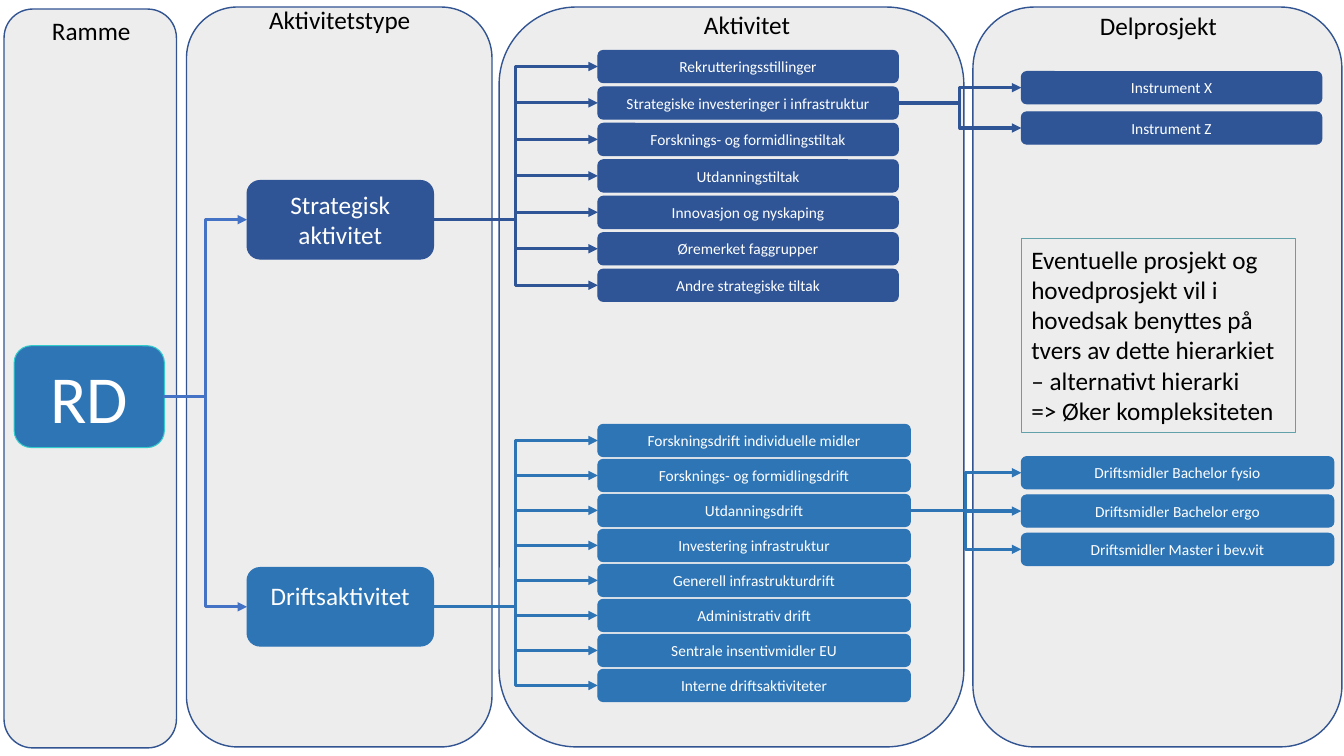
from lxml.etree import SubElement
from pptx import Presentation
from pptx.dml.color import RGBColor
from pptx.enum.shapes import MSO_CONNECTOR, MSO_SHAPE
from pptx.enum.text import MSO_ANCHOR, PP_ALIGN
from pptx.oxml.ns import qn
from pptx.util import Inches, Pt

WHITE = RGBColor(0xFF, 0xFF, 0xFF)
BLACK = RGBColor(0, 0, 0)
PANEL_GREY = RGBColor(0xED, 0xED, 0xED)
PANEL_LINE = RGBColor(0x32, 0x54, 0x91)
NAVY = RGBColor(0x2F, 0x55, 0x97)
BLUE = RGBColor(0x2E, 0x75, 0xB6)
LINK_BLUE = RGBColor(0x44, 0x72, 0xC4)
TURQUOISE = RGBColor(0x33, 0xCC, 0xCC)
NOTE_LINE = RGBColor(0x62, 0xA0, 0xAA)

# Content: panel heading, panel box, heading box (left, top, width, height)
PANELS = [
    ("Delprosjekt", (9.65, 0.07, 3.66, 7.34), (10.51, 0.05, 1.96, 0.4)),
    ("Aktivitet", (4.95, 0.07, 4.61, 7.34), (6.43, 0.04, 1.96, 0.4)),
    ("Aktivitetstype", (1.85, 0.07, 3.03, 7.34), (2.39, -0.01, 1.96, 0.4)),
    ("Ramme", (0.04, 0.09, 1.71, 7.33), (0.29, 0.1, 1.23, 0.4)),
]
ROOT = ("RD", (0.14, 3.43, 1.49, 1.01))

# Each list runs at an equal pitch from its first to its last top edge
BRANCHES = [
    {
        "name": "Strategisk aktivitet", "top": 1.79, "color": NAVY,
        "anchor": MSO_ANCHOR.MIDDLE, "width": 2.98,
        "activities": ["Rekrutteringsstillinger",
                       "Strategiske investeringer i infrastruktur",
                       "Forsknings- og formidlingstiltak",
                       "Utdanningstiltak",
                       "Innovasjon og nyskaping",
                       "Øremerket faggrupper",
                       "Andre strategiske tiltak"],
        "activity_tops": (0.5, 2.67),
        "parent": "Strategiske investeringer i infrastruktur",
        "subprojects": ["Instrument X", "Instrument Z"],
        "subproject_tops": (0.71, 1.11),
    },
    {
        "name": "Driftsaktivitet", "top": 5.63, "color": BLUE,
        "anchor": MSO_ANCHOR.TOP, "width": 3.1,
        "activities": ["Forskningsdrift individuelle midler",
                       "Forsknings- og formidlingsdrift",
                       "Utdanningsdrift",
                       "Investering infrastruktur",
                       "Generell infrastrukturdrift",
                       "Administrativ drift",
                       "Sentrale insentivmidler EU",
                       "Interne driftsaktiviteter"],
        "activity_tops": (4.21, 6.64),
        "parent": "Utdanningsdrift",
        "subprojects": ["Driftsmidler Bachelor fysio",
                        "Driftsmidler Bachelor ergo",
                        "Driftsmidler Master i bev.vit"],
        "subproject_tops": (4.53, 5.29),
    },
]
NOTE = ["Eventuelle prosjekt og hovedprosjekt vil i hovedsak benyttes på tvers "
        "av dette hierarkiet – alternativt hierarki",
        "=> Øker kompleksiteten"]
NOTE_BOX = (10.13, 2.37, 2.72, 1.92)

TYPE_LEFT, TYPE_WIDTH, TYPE_HEIGHT = 2.45, 1.85, 0.78
ACTIVITY_LEFT, SUBPROJECT_LEFT, ROW_HEIGHT = 5.93, 10.13, 0.32
LEFT_SITE, RIGHT_SITE = 1, 3

presentation = Presentation()
presentation.slide_width, presentation.slide_height = Inches(13.33), Inches(7.5)
slide = presentation.slides.add_slide(presentation.slide_layouts[6])


def write(shape, lines, size, color, align=PP_ALIGN.CENTER, anchor=MSO_ANCHOR.MIDDLE):
    frame = shape.text_frame
    frame.word_wrap = True
    frame.vertical_anchor = anchor
    for index, line in enumerate(lines):
        paragraph = frame.add_paragraph() if index else frame.paragraphs[0]
        paragraph.text = line
        paragraph.alignment = align
        font_format = {"name": "Calibri", "size": Pt(size)}
        for name, value in font_format.items():
            setattr(paragraph.font, name, value)
        paragraph.font.color.rgb = color


def add_box(box, fill, line, line_width=0.75, kind=MSO_SHAPE.ROUNDED_RECTANGLE):
    shape = slide.shapes.add_shape(kind, *map(Inches, box))
    shape.shadow.inherit = False
    if fill is None:
        shape.fill.background()
    else:
        shape.fill.solid()
        shape.fill.fore_color.rgb = fill
    shape.line.color.rgb = line
    shape.line.width = Pt(line_width)
    return shape


def add_column(names, tops, left, width, color):
    first, last = tops
    pitch = (last - first) / (len(names) - 1)
    boxes = {}
    for row, name in enumerate(names):
        box = (left, first + row * pitch, width, ROW_HEIGHT)
        boxes[name] = add_box(box, color, color)
        write(boxes[name], [name], 11, WHITE)
    return boxes


def link(parent, child, color):
    connector = slide.shapes.add_connector(MSO_CONNECTOR.ELBOW, 0, 0, 0, 0)
    connector.begin_connect(parent, RIGHT_SITE)
    connector.end_connect(child, LEFT_SITE)
    connector.line.color.rgb = color
    connector.line.width = Pt(2.25)
    SubElement(connector.line._get_or_add_ln(), qn("a:tailEnd"), type="triangle")
    SubElement(connector._element.spPr, qn("a:effectLst"))


# Background panels
for heading, panel_box, heading_box in PANELS:
    add_box(panel_box, PANEL_GREY, PANEL_LINE, 1)

# Hierarchy
root_name, root_box = ROOT
root = add_box(root_box, BLUE, TURQUOISE)
write(root, [root_name], 48, WHITE)
for branch in BRANCHES:
    color = branch["color"]
    activity_type = add_box((TYPE_LEFT, branch["top"], TYPE_WIDTH, TYPE_HEIGHT), color, color)
    write(activity_type, [branch["name"]], 18, WHITE, anchor=branch["anchor"])
    if branch["anchor"] == MSO_ANCHOR.TOP:
        activity_type.text_frame.margin_top = Inches(0.09)
    activities = add_column(branch["activities"], branch["activity_tops"],
                            ACTIVITY_LEFT, branch["width"], color)
    subprojects = add_column(branch["subprojects"], branch["subproject_tops"],
                             SUBPROJECT_LEFT, branch["width"], color)
    link(root, activity_type, LINK_BLUE)
    for activity in activities.values():
        link(activity_type, activity, color)
    for subproject in subprojects.values():
        link(activities[branch["parent"]], subproject, color)

# Panel headings
for heading, panel_box, heading_box in PANELS:
    text_box = slide.shapes.add_textbox(*map(Inches, heading_box))
    write(text_box, [heading], 18, BLACK, anchor=MSO_ANCHOR.TOP)

# Note
note = add_box(NOTE_BOX, None, NOTE_LINE, kind=MSO_SHAPE.RECTANGLE)
write(note, NOTE, 18, BLACK, PP_ALIGN.LEFT, MSO_ANCHOR.TOP)

presentation.save("out.pptx")
